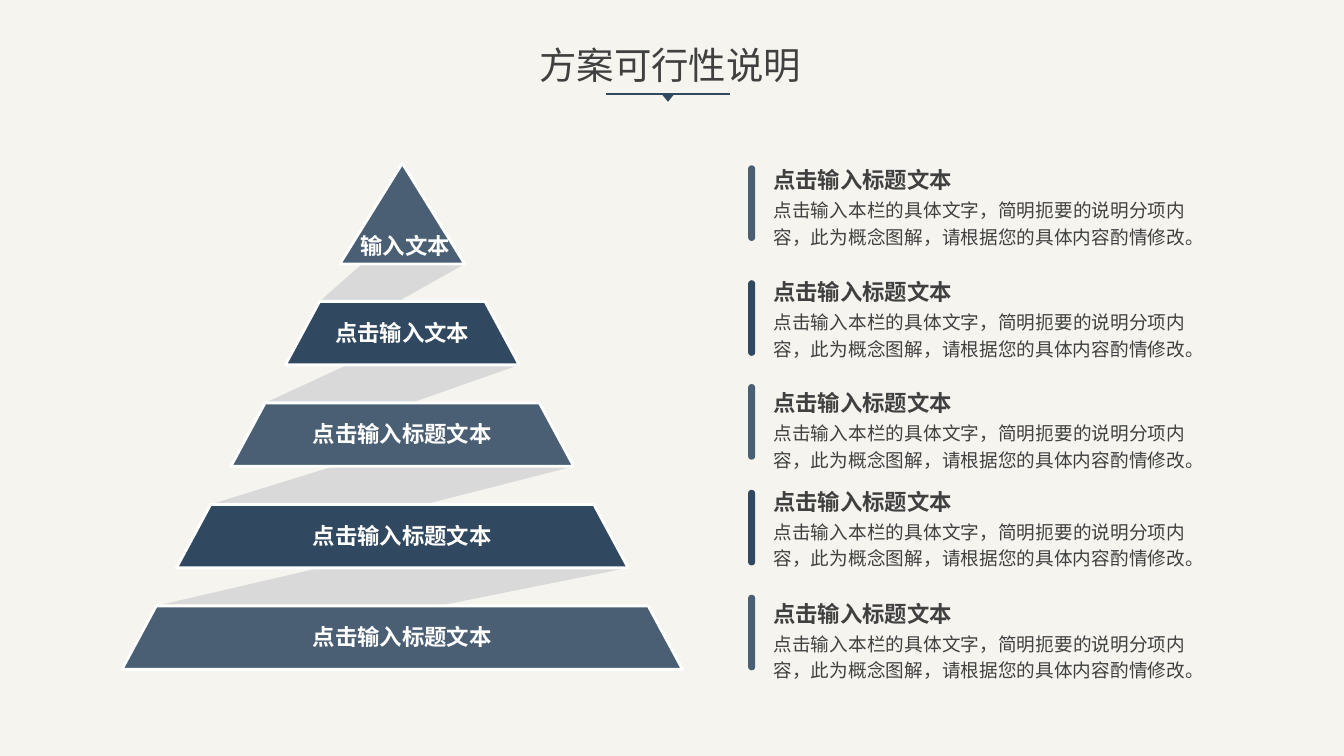
from lxml import etree
from pptx import Presentation
from pptx.dml.color import RGBColor
from pptx.enum.shapes import MSO_CONNECTOR, MSO_SHAPE
from pptx.enum.text import MSO_ANCHOR, MSO_AUTO_SIZE, PP_ALIGN
from pptx.oxml.ns import qn
from pptx.util import Inches, Pt

TITLE = "方案可行性说明"
LAYER_LABELS = ["输入文本", "点击输入文本", "点击输入标题文本", "点击输入标题文本", "点击输入标题文本"]
BODY = "点击输入本栏的具体文字，简明扼要的说明分项内容，此为概念图解，请根据您的具体内容酌情修改。"
# heading, body, top of the text, top of the bar
NOTES = [
    ("点击输入标题文本", BODY, 1.62, 1.64),
    ("点击输入标题文本", BODY, 2.73, 2.78),
    ("点击输入标题文本", BODY, 3.83, 3.81),
    ("点击输入标题文本", BODY, 4.81, 4.86),
    ("点击输入标题文本", BODY, 5.92, 5.90),
]

FONT = "Noto Sans CJK SC"
BACKGROUND, INK, WHITE, BAND = "F5F4EF", "404040", "FFFFFF", "D9D9D9"
SLATE, NAVY = "4A5F74", "304860"
LAYER_COLORS = [SLATE, NAVY, SLATE, NAVY, SLATE]

CENTER = 3.99
APEX_TOP, APEX_BASE, APEX_HALF = 1.62, 2.62, 0.62
LAYER_TOP, LAYER_STEP, LAYER_HEIGHT = 2.99, 1.007, 0.63
HALF_STEP, SLANT = 0.54, 0.34
LABEL_HEIGHT = 0.51
NOTE_INSETS = (0.05, 0.03, 0.05, 0.03)


def rgb(color):
    return RGBColor.from_string(color)


def paint(shape, fill, outline=None):
    shape.shadow.inherit = False
    shape.fill.solid()
    shape.fill.fore_color.rgb = rgb(fill)
    if outline:
        shape.line.color.rgb = rgb(outline)
        shape.line.width = Pt(2)
    else:
        shape.line.fill.background()


def add_polygon(shapes, points, fill, outline=None):
    corners = [(Inches(x), Inches(y)) for x, y in points]
    builder = shapes.build_freeform(*corners[0])
    builder.add_line_segments(corners[1:], close=True)
    paint(builder.convert_to_shape(), fill, outline)


def add_text(shapes, text, box, size, color=INK, bold=False, align=None, insets=None,
             wrap=True, grow=True, anchor=MSO_ANCHOR.TOP, spacing=None):
    frame = shapes.add_textbox(*map(Inches, box)).text_frame
    frame.word_wrap = wrap
    frame.vertical_anchor = anchor
    frame.auto_size = MSO_AUTO_SIZE.SHAPE_TO_FIT_TEXT if grow else MSO_AUTO_SIZE.NONE
    if insets:
        (frame.margin_left, frame.margin_top,
         frame.margin_right, frame.margin_bottom) = map(Inches, insets)
    paragraph = frame.paragraphs[0]
    paragraph.text = text
    paragraph.alignment = align
    paragraph.line_spacing = spacing
    font = paragraph.font
    font.size, font.bold, font.name = Pt(size), bold, FONT
    font.color.rgb = rgb(color)
    defaults = paragraph._p.pPr.find(qn("a:defRPr"))
    etree.SubElement(defaults, qn("a:ea")).set("typeface", FONT)


def layer_corners(index):
    """Top left, top right, bottom right and bottom left of a pyramid layer."""
    if index == 0:
        top, base, half_top, half_base = APEX_TOP, APEX_BASE, 0, APEX_HALF
    else:
        top = LAYER_TOP + LAYER_STEP * (index - 1)
        base = top + LAYER_HEIGHT
        half_base = APEX_HALF + HALF_STEP * index
        half_top = half_base - SLANT
    return [(CENTER - half_top, top), (CENTER + half_top, top),
            (CENTER + half_base, base), (CENTER - half_base, base)]


def add_heading(shapes):
    rule = shapes.add_connector(MSO_CONNECTOR.STRAIGHT, Inches(6.01), Inches(0.93),
                                Inches(7.24), Inches(0.93))
    rule.line.color.rgb = rgb(NAVY)
    rule.line.width = Pt(1.5)
    etree.SubElement(rule._element.spPr, qn("a:effectLst"))
    pointer = shapes.add_shape(MSO_SHAPE.ISOSCELES_TRIANGLE, Inches(6.56), Inches(0.93),
                               Inches(0.13), Inches(0.08))
    pointer.rotation = 180
    paint(pointer, NAVY)
    add_text(shapes, TITLE, (5.25, 0.37, 2.95, 0.54), 26.7, grow=False)


def add_pyramid(shapes):
    layers = [layer_corners(index) for index in range(len(LAYER_LABELS))]
    for index, (upper, lower) in enumerate(zip(layers, layers[1:])):
        shoulder = upper[1] if index else (4.24, 2.05)
        add_polygon(shapes, [shoulder, lower[0], lower[3], upper[2]], BAND)

    for index, (corners, label, color) in enumerate(zip(layers, LAYER_LABELS, LAYER_COLORS)):
        group = shapes.add_group_shape().shapes
        if index:
            (left, top), (right, _) = corners[:2]
            box = (left, top + 0.05, right - left, LABEL_HEIGHT)
        else:
            corners = corners[1:]
            box = (3.4, 2.18, 2 * APEX_HALF, LABEL_HEIGHT)
        add_polygon(group, corners, color, WHITE)
        add_text(group, label, box, 16, WHITE, bold=True, align=PP_ALIGN.CENTER,
                 insets=(0, 0, 0, 0), grow=False, anchor=MSO_ANCHOR.MIDDLE)


def add_notes_column(shapes):
    for (heading, body, top, bar_top), color in zip(NOTES, LAYER_COLORS):
        bar = shapes.add_shape(MSO_SHAPE.ROUND_2_SAME_RECTANGLE, Inches(7.42),
                               Inches(bar_top), Inches(0.07), Inches(0.75))
        bar.adjustments[0] = bar.adjustments[1] = 0.5
        paint(bar, color)
        group = shapes.add_group_shape().shapes
        add_text(group, body, (7.62, top + 0.28, 4.19, 0.58), 13.3,
                 align=PP_ALIGN.JUSTIFY, insets=NOTE_INSETS, spacing=1.2)
        add_text(group, heading, (7.62, top, 1.88, 0.32), 16, bold=True,
                 insets=NOTE_INSETS, wrap=False)


def main():
    deck = Presentation()
    deck.slide_width, deck.slide_height = Inches(13.33), Inches(7.5)
    slide = deck.slides.add_slide(deck.slide_layouts[6])
    slide.background.fill.solid()
    slide.background.fill.fore_color.rgb = rgb(BACKGROUND)
    add_heading(slide.shapes)
    add_pyramid(slide.shapes)
    add_notes_column(slide.shapes)
    deck.save("out.pptx")


if __name__ == "__main__":
    main()
